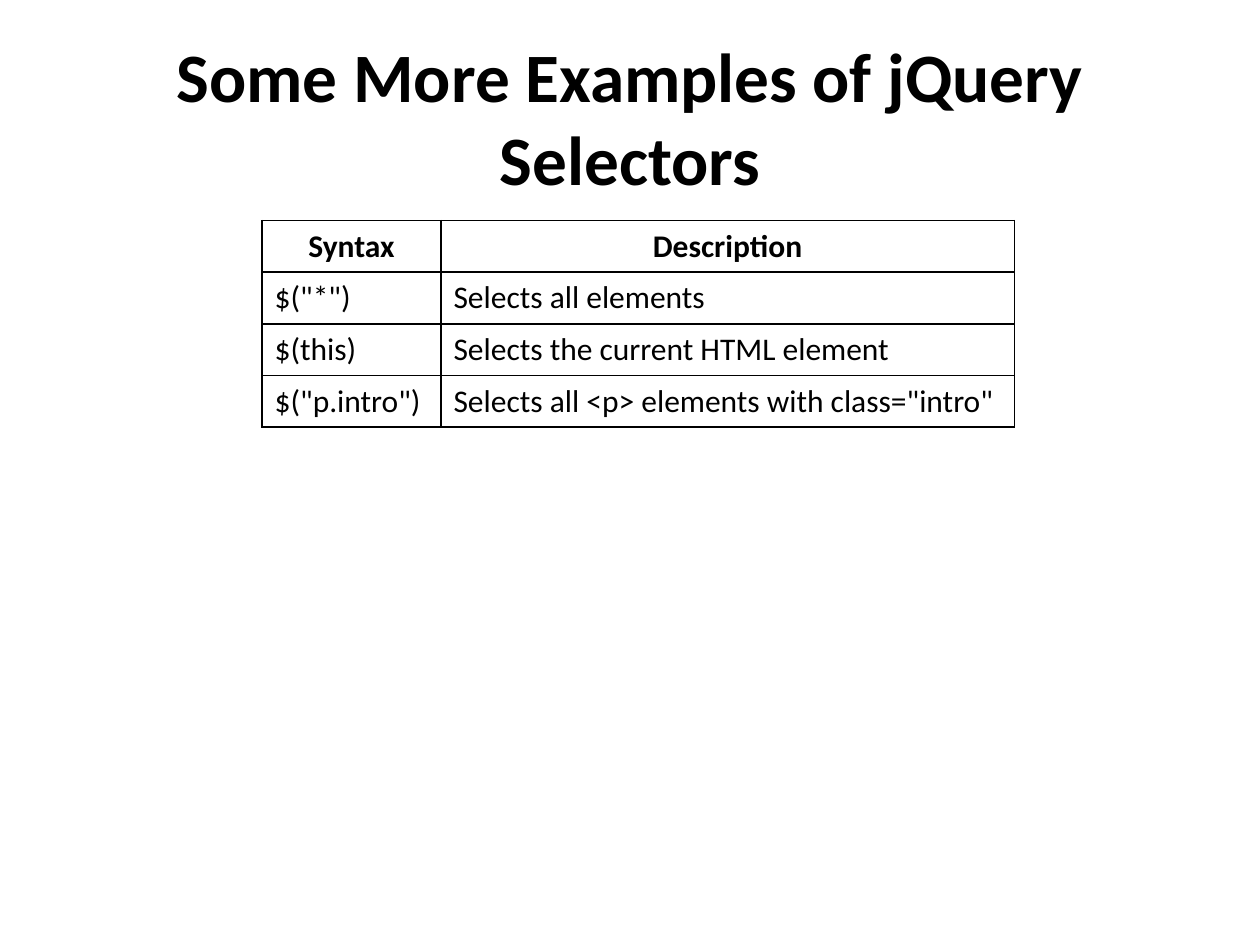
"""Build a slide with a title and a table of jQuery selectors."""
import lxml.etree
import pptx
import pptx.dml.color
import pptx.enum.text
import pptx.oxml.ns
import pptx.util

BLACK = pptx.dml.color.RGBColor(0x00, 0x00, 0x00)
WIDTH = pptx.util.Inches(10)
HEIGHT = pptx.util.Inches(7.5)
ALIGN = pptx.enum.text.PP_ALIGN
MIDDLE = pptx.enum.text.MSO_ANCHOR.MIDDLE
TITLE_ONLY = 5
COLUMN_WIDTHS = (1.42, 4.55)
ROW_HEIGHT = 0.41
SELECTORS = (
    ("Syntax", "Description"),
    ('$("*")', "Selects all elements"),
    ("$(this)", "Selects the current HTML element"),
    ('$("p.intro")', 'Selects all <p> elements with class="intro"'),
)


def format_text(frame, text, size, bold, alignment):
    """Write one formatted paragraph into a text frame."""
    frame.word_wrap = True
    para = frame.paragraphs[0]
    para.alignment = alignment
    span = para.add_run()
    span.text = text
    values = {"name": "Calibri", "size": pptx.util.Pt(size), "bold": bold}
    for name, value in values.items():
        setattr(span.font, name, value)
    span.font.color.rgb = BLACK


def add_title(page, text):
    """Place and fill the title placeholder."""
    title = page.shapes.title
    place = {
        "left": int(WIDTH * 0.05),
        "top": int(HEIGHT * 0.04),
        "width": int(WIDTH * 0.9),
        "height": pptx.util.Inches(1.25),
    }
    for name, value in place.items():
        setattr(title, name, value)
    title.text_frame.auto_size = pptx.enum.text.MSO_AUTO_SIZE.NONE
    title.text_frame.vertical_anchor = MIDDLE
    format_text(title.text_frame, text, 39.6, True, ALIGN.CENTER)


def add_borders(cell):
    """Draw a thin black line on every side of a cell."""
    properties = cell._tc.get_or_add_tcPr()
    qn = pptx.oxml.ns.qn
    for side in ("a:lnL", "a:lnR", "a:lnT", "a:lnB"):
        line = lxml.etree.SubElement(properties, qn(side), w=str(pptx.util.Pt(1)))
        fill = lxml.etree.SubElement(line, qn("a:solidFill"))
        lxml.etree.SubElement(fill, qn("a:srgbClr"), val=str(BLACK))


def add_table(page, rows):
    """Add a ruled table whose first row is a bold centred heading."""
    frame = page.shapes.add_table(
        len(rows), len(COLUMN_WIDTHS),
        pptx.util.Inches(2.08), pptx.util.Inches(1.75),
        pptx.util.Inches(sum(COLUMN_WIDTHS)),
        pptx.util.Inches(ROW_HEIGHT * len(rows)),
    )
    table = frame.table
    table.first_row = True
    table.horz_banding = False
    for column, width in zip(table.columns, COLUMN_WIDTHS):
        column.width = pptx.util.Inches(width)
    for index, texts in enumerate(rows):
        table.rows[index].height = pptx.util.Inches(ROW_HEIGHT)
        heading = index == 0
        alignment = ALIGN.CENTER if heading else ALIGN.LEFT
        for cell, text in zip(table.rows[index].cells, texts):
            add_borders(cell)
            cell.fill.background()
            cell.vertical_anchor = MIDDLE
            format_text(cell.text_frame, text, 18, heading, alignment)


def main():
    """Build and save the deck."""
    deck = pptx.Presentation()
    deck.slide_width, deck.slide_height = WIDTH, HEIGHT
    page = deck.slides.add_slide(deck.slide_layouts[TITLE_ONLY])
    add_title(page, "Some More Examples of jQuery Selectors")
    add_table(page, SELECTORS)
    deck.save("out.pptx")


if __name__ == "__main__":
    main()
